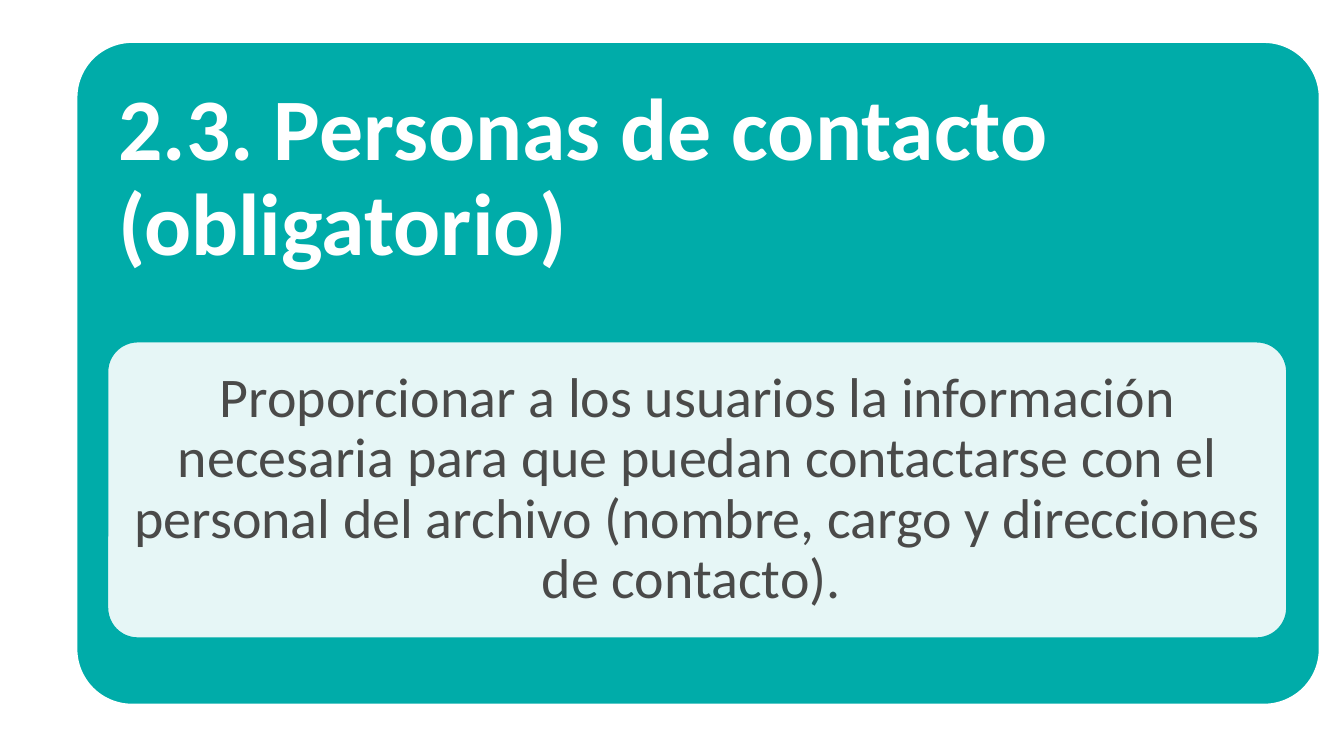
from lxml import etree
from pptx import Presentation
from pptx.dml.color import RGBColor
from pptx.enum import shapes, text
from pptx.oxml import ns
from pptx.util import Pt

TEAL = RGBColor(0x00, 0xAC, 0xA9)
WHITE = RGBColor(0xFF, 0xFF, 0xFF)
GRAY = RGBColor(0x4A, 0x4A, 0x49)

deck = Presentation()
deck.slide_width, deck.slide_height = Pt(720), Pt(405)
slide = deck.slides.add_slide(deck.slide_layouts[1])
title, body = slide.placeholders

cards = []
for box, bend, fill, line in (
    ((40.5, 22, 667, 356), 0.085, TEAL, WHITE),
    ((57, 182.5, 633, 160), 0.105, WHITE, TEAL),
):
    card = slide.shapes.add_shape(
        shapes.MSO_SHAPE.ROUNDED_RECTANGLE, *map(Pt, box))
    card.adjustments[0] = bend
    card.shadow.inherit = False
    card.fill.solid()
    card.fill.fore_color.rgb = fill
    card.line.color.rgb = line
    card.line.width = Pt(2)
    cards.append(card)

tint = cards[1].fill._xPr.find(".//" + ns.qn("a:srgbClr"))
etree.SubElement(tint, ns.qn("a:alpha"), val="90000")

for item, words, box, pads, anchor, align, size, bold, color in (
    (title, "2.3. Personas de contacto (obligatorio)",
     (49, 31, 649, 338), (14.4, 14.4, 14.4, 220),
     text.MSO_ANCHOR.TOP, text.PP_ALIGN.LEFT, 47, True, WHITE),
    (body, "Proporcionar a los usuarios la información necesaria para que "
     "puedan contactarse con el personal del archivo (nombre, cargo y "
     "direcciones de contacto). ",
     (62, 187.2, 623.5, 150.5), (8.64,) * 4,
     text.MSO_ANCHOR.MIDDLE, text.PP_ALIGN.CENTER, 30, False, GRAY),
):
    slide.shapes._spTree.append(item._element)
    item.left, item.top, item.width, item.height = map(Pt, box)
    frame = item.text_frame
    frame.text = words
    frame.word_wrap = True
    frame.auto_size = text.MSO_AUTO_SIZE.NONE
    frame.vertical_anchor = anchor
    (frame.margin_left, frame.margin_top,
     frame.margin_right, frame.margin_bottom) = map(Pt, pads)
    para = frame.paragraphs[0]
    props = para._p.get_or_add_pPr()
    props.set("marL", "0")
    props.set("indent", "0")
    etree.SubElement(props, ns.qn("a:buNone"))
    para.alignment = align
    para.line_spacing = 0.9
    para.space_before = Pt(0)
    para.font.name = "Calibri"
    para.font.size = Pt(size)
    para.font.bold = bold
    para.font.color.rgb = color

deck.save("out.pptx")
